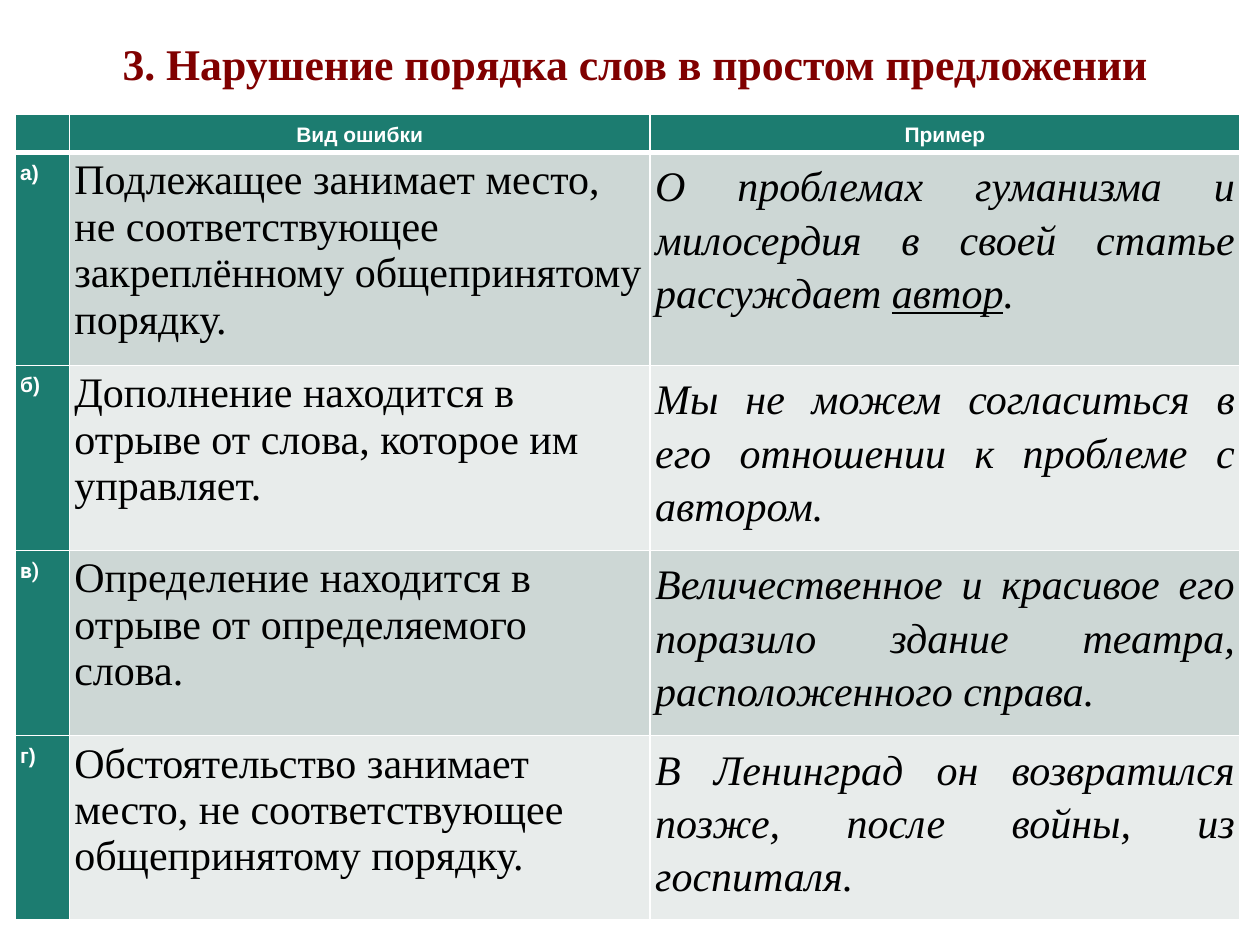
from dataclasses import dataclass
from typing import NamedTuple

from lxml.etree import SubElement
from pptx import Presentation
from pptx.dml.color import RGBColor
from pptx.enum.text import MSO_ANCHOR as Anchor, MSO_AUTO_SIZE as AutoSize, PP_ALIGN as Align
from pptx.oxml.ns import qn
from pptx.util import Inches, Pt


@dataclass(frozen=True)
class Theme:
    title: str = "800000"
    accent: str = "1C7C70"
    bands: tuple[str, str] = ("CDD7D5", "E8ECEB")
    light: str = "FFFFFF"
    ink: str = "000000"
    serif: str = "Times New Roman"
    sans: str = "Arial"
    title_size: float = 25
    body_size: float = 24
    label_size: float = 12
    thin: float = 1
    thick: float = 3


class Mistake(NamedTuple):
    letter: str
    kind: str
    example: str
    subject: str = ""  # underlined word after the example
    ending: str = ""
    letter_font: str = "Arial"


THEME = Theme()
HEADINGS = ("", "Вид ошибки", "Пример")
COLUMN_WIDTHS = (0.43, 4.61, 4.68)
ROW_HEIGHTS = (0.3, 1.69, 1.47, 1.47, 1.46)
MISTAKES = (
    Mistake("а)", "Подлежащее занимает место, не соответствующее закреплённому общепринятому порядку.",
            "О проблемах гуманизма и милосердия в своей статье рассуждает ", "автор", "."),
    Mistake("б)", "Дополнение находится в отрыве от слова, которое им управляет.",
            "Мы не можем согласиться в его отношении к проблеме с автором."),
    Mistake("в)", "Определение находится в отрыве от определяемого слова.",
            "Величественное и красивое его поразило здание театра, расположенного справа.",
            letter_font="Roboto"),
    Mistake("г)", "Обстоятельство занимает место, не соответствующее общепринятому порядку.",
            "В Ленинград он возвратился позже, после войны, из госпиталя."),
)


def write(paragraph, text: str, *, size: float, font: str, color: str, bold=False,
          italic=False, underline=False, align=Align.LEFT, spacing=1.0) -> None:
    """Append a formatted run and set the paragraph's alignment and line spacing."""
    paragraph.alignment = align
    paragraph.line_spacing = spacing
    run = paragraph.add_run()
    run.text = text
    run.font.size = Pt(size)
    run.font.name = font
    run.font.color.rgb = RGBColor.from_string(color)
    run.font.bold = bold
    run.font.italic = italic
    run.font.underline = underline


def style_cell(cell, fill: str, top: float, bottom: float) -> None:
    """Set borders, fill and insets; top and bottom are line widths in points."""
    properties = cell._tc.get_or_add_tcPr()
    for side, width in (("L", THEME.thin), ("R", THEME.thin), ("T", top), ("B", bottom)):
        line = SubElement(properties, qn(f"a:ln{side}"), w=str(Pt(width)))
        SubElement(SubElement(line, qn("a:solidFill")), qn("a:srgbClr"), val=THEME.light)
    cell.fill.solid()
    cell.fill.fore_color.rgb = RGBColor.from_string(fill)
    cell.margin_left = cell.margin_right = Inches(0.04)
    cell.margin_top = cell.margin_bottom = Inches(0.04)


def add_title(slide, text: str) -> None:
    title = slide.shapes.title
    title.left, title.top = Inches(0.51), Inches(0.24)
    title.width, title.height = Inches(9.06), Inches(0.52)
    frame = title.text_frame
    frame.auto_size = AutoSize.NONE
    frame.word_wrap = True
    frame.vertical_anchor = Anchor.MIDDLE
    write(frame.paragraphs[0], text, size=THEME.title_size, font=THEME.serif,
          color=THEME.title, bold=True, align=Align.CENTER)


def add_mistakes_table(slide) -> None:
    table = slide.shapes.add_table(
        len(ROW_HEIGHTS), len(COLUMN_WIDTHS), Inches(0.12), Inches(0.91),
        Inches(sum(COLUMN_WIDTHS)), Inches(sum(ROW_HEIGHTS))).table
    for column, width in zip(table.columns, COLUMN_WIDTHS):
        column.width = Inches(width)
    for row, height in zip(table.rows, ROW_HEIGHTS):
        row.height = Inches(height)

    label = dict(size=THEME.label_size, color=THEME.light, bold=True, spacing=1.15)
    body = dict(size=THEME.body_size, font=THEME.serif, color=THEME.ink)
    example = dict(body, italic=True, align=Align.JUSTIFY, spacing=1.15)

    for column, heading in enumerate(HEADINGS):
        cell = table.cell(0, column)
        style_cell(cell, THEME.accent, THEME.thin, THEME.thick)
        if heading:
            write(cell.text_frame.paragraphs[0], heading, font=THEME.sans,
                  align=Align.CENTER, **label)
        else:
            cell.text_frame.paragraphs[0].font.size = Pt(THEME.label_size)

    for row, mistake in enumerate(MISTAKES, start=1):
        band = THEME.bands[(row - 1) % 2]
        top = THEME.thick if row == 1 else THEME.thin
        cells = [table.cell(row, column) for column in range(len(COLUMN_WIDTHS))]
        for cell, fill in zip(cells, (THEME.accent, band, band)):
            style_cell(cell, fill, top, THEME.thin)
        letter, kind, sample = (cell.text_frame.paragraphs[0] for cell in cells)
        write(letter, mistake.letter, font=mistake.letter_font, **label)
        write(kind, mistake.kind, **body)
        write(sample, mistake.example, **example)
        if mistake.subject:
            write(sample, mistake.subject, underline=True, **example)
            write(sample, mistake.ending, **example)


def main() -> None:
    deck = Presentation()
    deck.slide_width, deck.slide_height = Inches(10), Inches(7.5)
    slide = deck.slides.add_slide(deck.slide_layouts[5])
    add_title(slide, "3. Нарушение порядка слов в простом предложении")
    add_mistakes_table(slide)
    deck.save("out.pptx")


if __name__ == "__main__":
    main()
